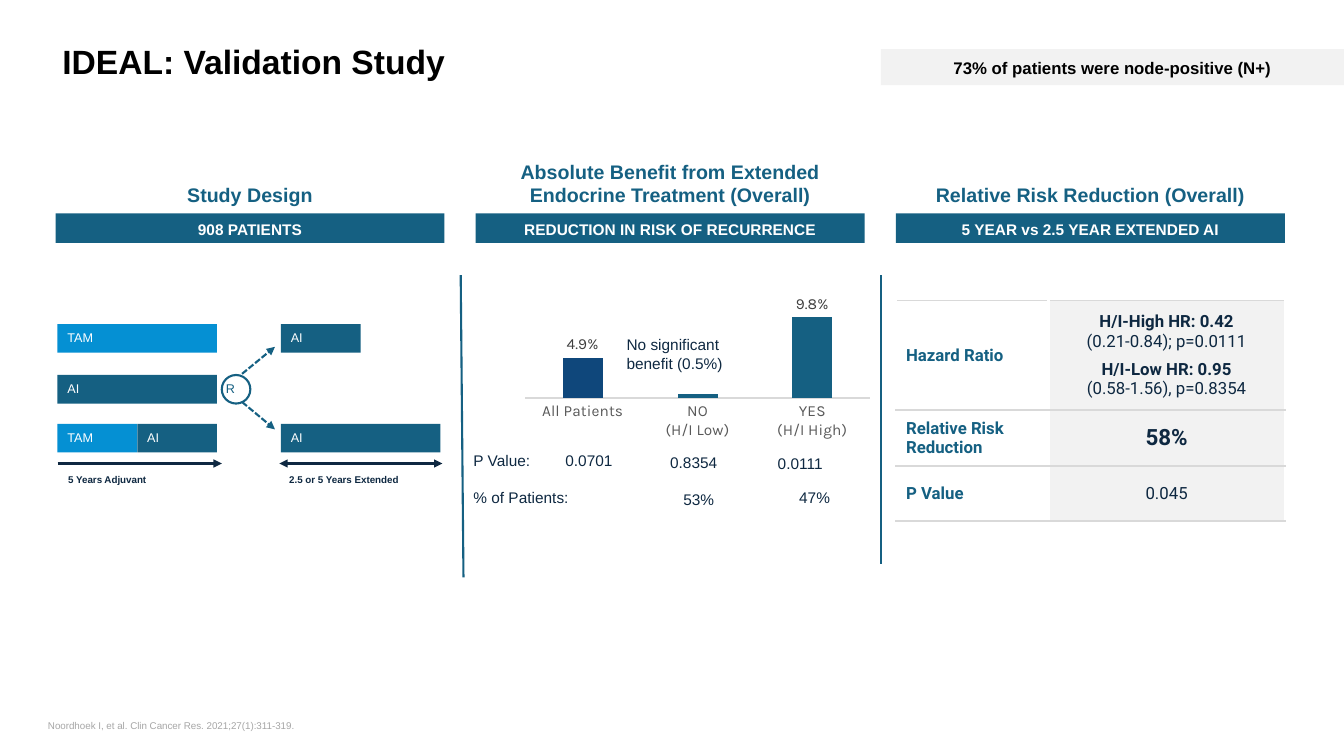
import pptx
import pptx.chart.data
import pptx.dml.color
import pptx.enum.chart
import pptx.enum.dml
import pptx.enum.shapes
import pptx.enum.text
import pptx.oxml
import pptx.oxml.ns
import pptx.util

COLORS = {"teal": "156082", "blue": "0590D3", "royal": "0F477B", "navy": "0E2841",
          "white": "FFFFFF", "black": "000000", "pale": "F2F2F2", "rule": "D9D9D9",
          "axis": "595959", "value": "404040", "source": "A6A6A6"}
RGB = {name: pptx.dml.color.RGBColor.from_string(h) for name, h in COLORS.items()}
NS = pptx.oxml.ns.nsdecls("a")
SHAPE = pptx.enum.shapes.MSO_SHAPE
ANCHOR = pptx.enum.text.MSO_ANCHOR
CENTER = pptx.enum.text.PP_ALIGN.CENTER


def write(p, text, size, color, bold=False, font="Arial"):
    r = p.add_run()
    r.text = text
    r.font.name = font
    r.font.size = pptx.util.Pt(size)
    r.font.bold = bold
    r.font.color.rgb = RGB[color]


def add_box(left, top, width, height, fill=None, preset=SHAPE.RECTANGLE,
            anchor=ANCHOR.MIDDLE, align=None, spacing=None):
    """Add a filled shape, or a text box without a fill; lengths are in cm."""
    place = [pptx.util.Cm(v) for v in (left, top, width, height)]
    if fill:
        sp = s.shapes.add_shape(preset, *place)
        sp.shadow.inherit = False
        sp.fill.solid()
        sp.fill.fore_color.rgb = RGB[fill]
        sp.line.fill.background()
    else:
        sp = s.shapes.add_textbox(*place)
    tf = sp.text_frame
    tf.word_wrap = True
    tf.vertical_anchor = anchor
    p = tf.paragraphs[0]
    p.alignment = align or pptx.enum.text.PP_ALIGN.LEFT
    p.line_spacing = spacing
    return sp, p


prs = pptx.Presentation()
prs.slide_width = pptx.util.Cm(33.87)
prs.slide_height = pptx.util.Cm(19.05)
s = prs.slides.add_slide(prs.slide_layouts[5])

# Title and node-status banner
title = s.shapes.title
title.left, title.top = pptx.util.Cm(1.57), pptx.util.Cm(1.04)
title.width, title.height = pptx.util.Cm(13.74), pptx.util.Cm(1.09)
tf = title.text_frame
tf.margin_left = tf.margin_right = 0
tf.vertical_anchor = ANCHOR.MIDDLE
tf.auto_size = pptx.enum.text.MSO_AUTO_SIZE.NONE
p = tf.paragraphs[0]
p.alignment = pptx.enum.text.PP_ALIGN.LEFT
p.line_spacing = 0.95
write(p, "IDEAL: Validation Study", 24, "black", True)

sp, p = add_box(22.2, 1.24, 11.67, 0.91, "pale", align=CENTER, spacing=1.1)
write(p, "73% of patients were node-positive (N+)", 12, "black", True)

# Column headings
headings = [
    ("Study Design", "908 PATIENTS"),
    ("Absolute Benefit from Extended Endocrine Treatment (Overall)",
     "REDUCTION IN RISK OF RECURRENCE"),
    ("Relative Risk Reduction (Overall)", "5 YEAR vs 2.5 YEAR EXTENDED AI"),
]
for i, (heading, band) in enumerate(headings):
    left = 1.4 + 10.59 * i
    sp, p = add_box(left, 3.89, 9.8, 1.45, anchor=ANCHOR.BOTTOM, align=CENTER)
    write(p, heading, 14, "teal", True)
    sp, p = add_box(left, 5.38, 9.8, 0.74, "teal", align=CENTER, spacing=1.1)
    write(p, band, 11, "white", True)

# Column dividers and study arrows
lines = [
    (11.61, 6.93, 11.68, 14.55, "teal", False, ""),
    (22.2, 6.93, 22.2, 14.22, "teal", False, ""),
    (1.45, 11.68, 5.59, 11.68, "navy", False, "tail"),
    (7.04, 11.68, 11.15, 11.68, "navy", False, "head tail"),
    (6.1, 9.42, 6.93, 8.74, "teal", True, "tail"),
    (6.1, 10.13, 6.93, 10.82, "teal", True, "tail"),
]
for x1, y1, x2, y2, color, dashed, ends in lines:
    cn = s.shapes.add_connector(pptx.enum.shapes.MSO_CONNECTOR.STRAIGHT,
                                *[pptx.util.Cm(v) for v in (x1, y1, x2, y2)])
    cn.line.color.rgb = RGB[color]
    cn.line.width = pptx.util.Pt(1.5)
    if dashed:
        cn.line.dash_style = pptx.enum.dml.MSO_LINE.SQUARE_DOT
    for end in ends.split():
        cn.line._get_or_add_ln().append(
            pptx.oxml.parse_xml(f'<a:{end}End {NS} type="triangle"/>'))
    cn._element.spPr.append(pptx.oxml.parse_xml(f"<a:effectLst {NS}/>"))

# Study arms
arms = [
    (1.45, 8.17, 4.02, "TAM", "blue"), (7.08, 8.17, 2.01, "AI", "teal"),
    (1.45, 9.45, 4.02, "AI", "teal"),
    (1.45, 10.68, 2.01, "TAM", "blue"), (3.46, 10.68, 2.01, "AI", "teal"),
    (7.08, 10.68, 4.02, "AI", "teal"),
]
for left, top, width, drug, color in arms:
    sp, p = add_box(left, top, width, 0.72, color, spacing=0.95)
    write(p, drug, 9, "white")
for left, caption in ((1.47, "5 Years Adjuvant"), (7.04, "2.5 or 5 Years Extended")):
    sp, p = add_box(left, 11.71, 4.1, 0.76)
    write(p, caption, 7, "navy", True)

sp, p = add_box(5.59, 9.45, 0.72, 0.72, "white", SHAPE.OVAL, spacing=0.95)
sp.line.color.rgb = RGB["teal"]
sp.line.width = pptx.util.Pt(1.5)
tf = sp.text_frame
tf.margin_left = tf.margin_right = tf.margin_top = tf.margin_bottom = 0
write(p, "R", 9, "teal")

# Recurrence chart
data = pptx.chart.data.CategoryChartData(number_format="0.0%")
data.categories = ["All Patients", "NO\n(H/I Low)", "YES\n(H/I High)"]
data.add_series("Series 1", [0.049, 0.005, 0.098])
chart = s.shapes.add_chart(pptx.enum.chart.XL_CHART_TYPE.COLUMN_CLUSTERED,
                           *[pptx.util.Cm(v) for v in (13.06, 3.66, 9.04, 7.57)],
                           data).chart
chart.has_title = chart.has_legend = False
chart.font.name = "Karla"
chart.font.size = pptx.util.Pt(11)
va, ca = chart.value_axis, chart.category_axis
va.minimum_scale, va.maximum_scale = 0, 0.3
va.has_major_gridlines = va.visible = False
ca.major_tick_mark = pptx.enum.chart.XL_TICK_MARK.NONE
ca.format.line.color.rgb = RGB["rule"]
ca.format.line.width = pptx.util.Pt(1.5)
ca.tick_labels.font.name = "Karla"
ca.tick_labels.font.size = pptx.util.Pt(11)
ca.tick_labels.font.color.rgb = RGB["axis"]
plot = chart.plots[0]
plot.gap_width, plot.overlap, plot.vary_by_categories = 187, -27, False
series = plot.series[0]
for fmt, color in ((series.format, "teal"), (series.points[0].format, "royal")):
    fmt.fill.solid()
    fmt.fill.fore_color.rgb = RGB[color]
labels = series.data_labels
labels.show_value = True
labels.number_format, labels.number_format_is_linked = "0.0%", False
labels.position = pptx.enum.chart.XL_LABEL_POSITION.OUTSIDE_END
labels.font.name = "Karla"
labels.font.size = pptx.util.Pt(11)
labels.font.color.rgb = RGB["value"]
labels._element.insert(0, pptx.oxml.parse_xml(
    f'<c:dLbl {pptx.oxml.ns.nsdecls("c")}><c:idx val="1"/><c:delete val="1"/></c:dLbl>'))

sp, p = add_box(15.54, 8.33, 3.68, 1.19, anchor=ANCHOR.TOP)
write(p, "No significant benefit (0.5%)", 11, "navy")

# Figures under the chart, and the source
notes = [
    (11.68, 11.25, 2.92, ["P Value:", "% of Patients:"], 11, "navy"),
    (14.0, 11.25, 1.7, ["0.0701"], 11, "navy"),
    (16.64, 11.3, 1.7, ["0.8354"], 11, "navy"),
    (19.35, 11.33, 1.7, ["0.0111"], 11, "navy"),
    (16.97, 12.22, 1.3, ["53%"], 11, "navy"),
    (19.89, 12.17, 1.3, ["47%"], 11, "navy"),
    (0.96, 18.01, 6.84, ["Noordhoek I, et al. Clin Cancer Res. 2021;27(1):311-319."],
     7, "source"),
]
for left, top, width, texts, size, color in notes:
    sp, p = add_box(left, top, width, 0.56 if size == 7 else 0.74, anchor=ANCHOR.TOP)
    sp.text_frame.word_wrap = False
    sp.text_frame.auto_size = pptx.enum.text.MSO_AUTO_SIZE.SHAPE_TO_FIT_TEXT
    write(p, texts[0], size, color)
    for text in texts[1:]:
        p = sp.text_frame.add_paragraph()
        p.space_before = pptx.util.Pt(13)
        write(p, text, size, color)

# Risk table: each paragraph is a list of (text, size, bold) lines
rows = [
    (2.77, "Hazard Ratio", [[("H/I-High HR: 0.42", 12, True), ("(0.21-0.84); p=0.0111", 12, False)],
                            [("H/I-Low HR: 0.95", 12, True), ("(0.58-1.56), p=0.8354", 12, False)]]),
    (1.4, "Relative Risk Reduction", [[("58%", 16, True)]]),
    (1.4, "P Value", [[("0.045", 12, False)]]),
]
table = s.shapes.add_table(3, 2, *[pptx.util.Cm(v) for v in (22.58, 7.57, 9.8, 5.57)]).table
table.first_row = table.horz_banding = False
table.columns[0].width, table.columns[1].width = pptx.util.Cm(3.84), pptx.util.Cm(5.96)
borders = [("L", "white", 2.25), ("R", "white", 2.25), ("T", "rule", 1.5), ("B", "rule", 1.5)]
for i, (height, name, result) in enumerate(rows):
    table.rows[i].height = pptx.util.Cm(height)
    for j, paragraphs in enumerate(([[(name, 12, True)]], result)):
        cell = table.cell(i, j)
        cell.vertical_anchor = ANCHOR.MIDDLE
        cell.margin_top = cell.margin_bottom = 0
        for side, color, width in borders[1 - j:]:
            cell._tc.get_or_add_tcPr().append(pptx.oxml.parse_xml(
                f'<a:ln{side} {NS} w="{pptx.util.Pt(width)}"><a:solidFill>'
                f'<a:srgbClr val="{COLORS[color]}"/></a:solidFill></a:ln{side}>'))
        if j:
            cell.fill.solid()
            cell.fill.fore_color.rgb = RGB["pale"]
        else:
            cell.fill.background()
        for k, para in enumerate(paragraphs):
            p = cell.text_frame.add_paragraph() if k else cell.text_frame.paragraphs[0]
            if k:
                p.space_before = pptx.util.Pt(6)
            if j:
                p.alignment = CENTER
            for n, (text, size, bold) in enumerate(para):
                if n:
                    p.add_line_break()
                write(p, text, size, "navy" if j else "teal", bold, "Roboto")

prs.save("out.pptx")
